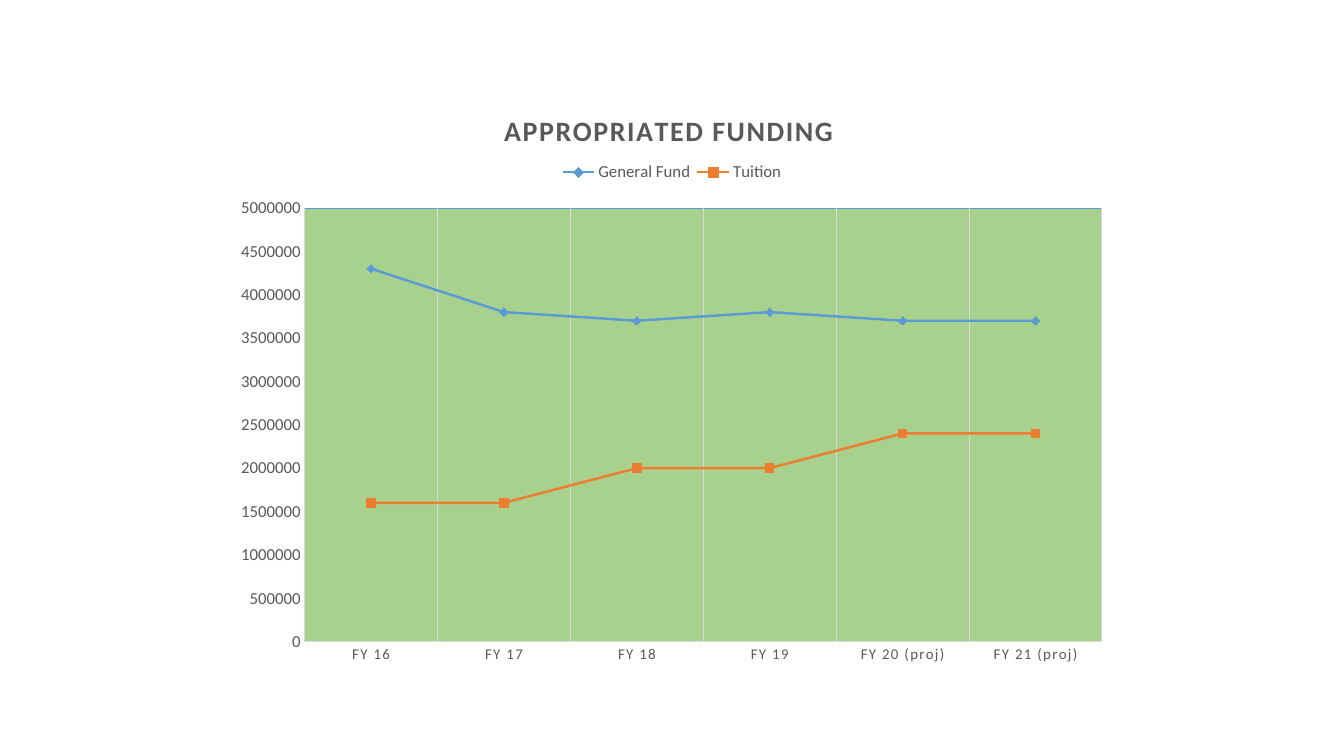
from lxml.etree import SubElement
from pptx import Presentation
from pptx.chart.data import CategoryChartData
from pptx.dml.color import RGBColor
from pptx.enum.chart import XL_CHART_TYPE as ChartType
from pptx.enum.chart import XL_LEGEND_POSITION as LegendPosition
from pptx.enum.chart import XL_MARKER_STYLE as Marker
from pptx.enum.chart import XL_TICK_MARK as TickMark
from pptx.oxml import parse_xml
from pptx.oxml.ns import nsdecls, qn
from pptx.util import Inches, Pt

FONT = "Calibri"
GREY = RGBColor(0x59, 0x59, 0x59)
PALE_GREY = RGBColor(0xD9, 0xD9, 0xD9)
GREEN = RGBColor(0xA9, 0xD1, 0x8E)
BLUE = RGBColor(0x5B, 0x9B, 0xD5)
ORANGE = RGBColor(0xED, 0x7D, 0x31)

YEARS = ["FY 16", "FY 17", "FY 18", "FY 19", "FY 20 (proj)", "FY 21 (proj)"]
FUNDING = {
    "General Fund": (4300000, 3800000, 3700000, 3800000, 3700000, 3700000),
    "Tuition": (1600000, 1600000, 2000000, 2000000, 2400000, 2400000),
}
SERIES_STYLES = [(BLUE, Marker.DIAMOND), (ORANGE, Marker.SQUARE)]


def format_font(font, *, size, bold=False, color=GREY):
    font.name = FONT
    font.size = Pt(size)
    font.bold = bold
    font.color.rgb = color


def write_text(frame, text, *, spacing=0, **font_format):
    frame.text = text
    run = frame.paragraphs[0].runs[0]
    format_font(run.font, **font_format)
    run.font._element.set("spc", str(spacing))


def format_line(line, color, width=0.75):
    line.color.rgb = color
    line.width = Pt(width)


def place(part, after=None, inner=False, **shares):
    """Set a chart part's manual layout in shares of the chart's size."""
    for old in part.findall(qn("c:layout")):
        part.remove(old)
    layout = parse_xml(f"<c:layout {nsdecls('c')}><c:manualLayout/></c:layout>")
    settings = {"layoutTarget": "inner"} if inner else {}
    settings.update(xMode="edge", yMode="edge", **shares)
    for tag, value in settings.items():
        SubElement(layout[0], qn(f"c:{tag}")).set("val", str(value))
    if after is None:
        part.insert(0, layout)
    else:
        part.find(qn(after)).addnext(layout)


def format_plot_area(plot_area):
    plot_area.append(parse_xml(
        f"<c:spPr {nsdecls('c', 'a')}>"
        f'<a:solidFill><a:srgbClr val="{GREEN}"/></a:solidFill>'
        f'<a:ln w="{Pt(0.75)}"><a:solidFill><a:srgbClr val="{BLUE}"/>'
        "</a:solidFill></a:ln></c:spPr>"))
    place(plot_area, inner=True, x=0.09, y=0.215, w=0.89, h=0.726)


def format_axis(axis, size):
    axis.major_tick_mark = axis.minor_tick_mark = TickMark.NONE
    format_font(axis.tick_labels.font, size=size)
    format_line(axis.format.line, PALE_GREY)


def format_axes(chart):
    years, dollars = chart.category_axis, chart.value_axis
    format_axis(years, 10.6)
    years.has_major_gridlines = True
    format_line(years.major_gridlines.format.line, PALE_GREY)
    chart.element.xpath(".//c:catAx/c:txPr//a:defRPr")[0].set("spc", "100")
    format_axis(dollars, 12)
    dollars.has_major_gridlines = False
    dollars.minimum_scale, dollars.maximum_scale = 0, 5000000
    dollars.major_unit = 500000
    dollars.tick_labels.number_format = "General"
    dollars.tick_labels.number_format_is_linked = False


def format_series(chart):
    for series, (color, marker) in zip(chart.plots[0].series, SERIES_STYLES):
        series.smooth = False
        format_line(series.format.line, color, 1.75)
        series.marker.style = marker
        series.marker.size = 6
        series.marker.format.fill.solid()
        series.marker.format.fill.fore_color.rgb = color
        format_line(series.marker.format.line, color)


def add_funding_chart(slide, width, height):
    data = CategoryChartData(number_format="General")
    data.categories = YEARS
    for name, amounts in FUNDING.items():
        data.add_series(name, amounts)
    chart = slide.shapes.add_chart(
        ChartType.LINE_MARKERS, int(width / 6), Inches(0.79),
        int(width * 2 / 3), int(height * 0.79), data).chart
    format_font(chart.font, size=10, color=RGBColor(0, 0, 0))
    chart.plots[0].vary_by_categories = False
    format_axes(chart)
    format_series(chart)
    format_plot_area(chart.element.xpath("c:chart/c:plotArea")[0])

    chart.has_title = True
    write_text(chart.chart_title.text_frame, "APPROPRIATED FUNDING",
               size=20, bold=True, spacing=100)
    place(chart.element.xpath("c:chart/c:title")[0], "c:tx", x=0.307, y=0.043)

    chart.has_legend = True
    chart.legend.position = LegendPosition.TOP
    chart.legend.include_in_layout = False
    format_font(chart.legend.font, size=12)
    place(chart.element.xpath("c:chart/c:legend")[0], "c:legendPos",
          x=0.37, y=0.13, w=0.26, h=0.05)


def main():
    deck = Presentation()
    deck.slide_width, deck.slide_height = Inches(13.33), Inches(7.5)
    slide = deck.slides.add_slide(deck.slide_layouts[6])
    add_funding_chart(slide, deck.slide_width, deck.slide_height)
    deck.save("out.pptx")


if __name__ == "__main__":
    main()
